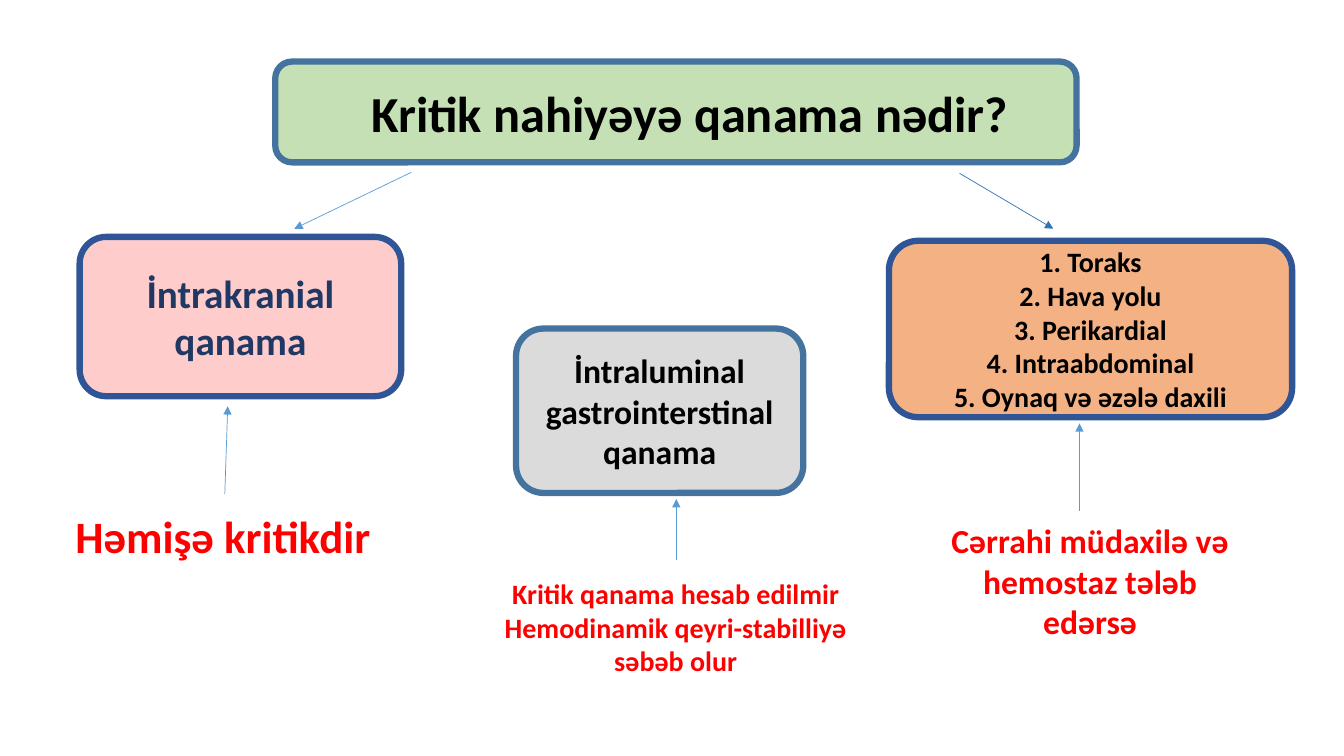
from lxml import etree
from pptx import Presentation
from pptx.dml.color import RGBColor
from pptx.enum.shapes import MSO_CONNECTOR as Line, MSO_SHAPE as Shape
from pptx.enum.text import MSO_ANCHOR as Anchor, MSO_AUTO_SIZE as AutoSize, PP_ALIGN as Align
from pptx.oxml.ns import qn
from pptx.util import Pt

BLACK = RGBColor(0x00, 0x00, 0x00)
RED = RGBColor(0xFF, 0x00, 0x00)
NAVY = RGBColor(0x20, 0x38, 0x64)
DARK_BLUE = RGBColor(0x2F, 0x55, 0x97)
STEEL = RGBColor(0x43, 0x73, 0x9E)
MID_BLUE = RGBColor(0x2E, 0x75, 0xB6)
LIGHT_BLUE = RGBColor(0x5B, 0x9B, 0xD5)
GREEN = RGBColor(0xC5, 0xE0, 0xB4)
PINK = RGBColor(0xFF, 0xCC, 0xCC)
ORANGE = RGBColor(0xF4, 0xB1, 0x83)
GREY = RGBColor(0xDB, 0xDB, 0xDB)


def write(frame, lines, size, color, align=Align.CENTER):
    frame.word_wrap = True
    frame.text = "\n".join(lines)
    for paragraph in frame.paragraphs:
        paragraph.alignment = align
        font = paragraph.font
        font.name, font.size, font.bold = "Calibri", Pt(size), True
        font.color.rgb = color


def add_panel(bounds, fill, border):
    panel = slide.shapes.add_shape(Shape.ROUNDED_RECTANGLE, *map(Pt, bounds))
    panel.shadow.inherit = False
    panel.fill.solid()
    panel.fill.fore_color.rgb = fill
    panel.line.color.rgb = border
    panel.line.width = Pt(4.5)
    return panel


prs = Presentation()
prs.slide_width, prs.slide_height = Pt(960), Pt(540)
slide = prs.slides.add_slide(prs.slide_layouts[5])

# Question in its green panel, with the title in front
question = slide.shapes.title
question_bounds = (196.6, 44, 572.4, 72)
question_panel = add_panel(question_bounds, GREEN, STEEL)
question._element.addprevious(question_panel._element)
question.left, question.top, question.width, question.height = map(Pt, question_bounds)
write(question.text_frame, ["Kritik nahiyəyə qanama nədir?"], 36, BLACK, Align.LEFT)
question.text_frame.auto_size = AutoSize.NONE
question.text_frame.vertical_anchor = Anchor.MIDDLE
question.text_frame.margin_left = Pt(68.5)

# Kinds of bleeding
bleedings = [
    ((56.9, 169.2, 229.7, 113.8), PINK, DARK_BLUE, ["İntrakranial qanama"], 28, NAVY),
    ((635, 172, 288, 126), ORANGE, DARK_BLUE,
     ["1. Toraks", "2. Hava yolu", "3. Perikardial", "4. Intraabdominal",
      "5. Oynaq və əzələ daxili"], 20, BLACK),
    ((368.6, 234.7, 205.2, 117.4), GREY, STEEL,
     ["İntraluminal gastrointerstinal qanama"], 24, BLACK),
]
for bounds, fill, border, lines, size, color in bleedings:
    bleeding = add_panel(bounds, fill, border)
    bleeding.text_frame.vertical_anchor = Anchor.MIDDLE
    write(bleeding.text_frame, lines, size, color)

# When each kind is critical
verdicts = [
    ((46.8, 360, 249, 46), ["Həmişə kritikdir"], 32, Align.LEFT),
    ((339, 408.2, 287.3, 80), ["Kritik qanama hesab edilmir",
                               "Hemodinamik qeyri-stabilliyə səbəb olur"], 20, Align.CENTER),
    ((669.6, 368, 218, 94.5), ["Cərrahi müdaxilə və hemostaz tələb edərsə"], 24, Align.CENTER),
]
for bounds, lines, size, align in verdicts:
    verdict = slide.shapes.add_textbox(*map(Pt, bounds))
    write(verdict.text_frame, lines, size, RED, align)

# Arrows from the question and from the verdicts
arrows = [
    ((685.4, 123.8, 752.4, 163.4), MID_BLUE),
    ((293.8, 123.1, 210.2, 163.4), LIGHT_BLUE),
    ((771.1, 365, 771.1, 302.4), LIGHT_BLUE),
    ((160.6, 352.8, 162.7, 290.2), LIGHT_BLUE),
    ((483.1, 400.3, 483.1, 356.4), LIGHT_BLUE),
]
for ends, color in arrows:
    arrow = slide.shapes.add_connector(Line.STRAIGHT, *map(Pt, ends))
    arrow.line.color.rgb = color
    arrow.line.width = Pt(0.5)
    etree.SubElement(arrow.line._get_or_add_ln(), qn("a:tailEnd"), type="triangle")
    etree.SubElement(arrow._element.spPr, qn("a:effectLst"))

prs.save("out.pptx")
